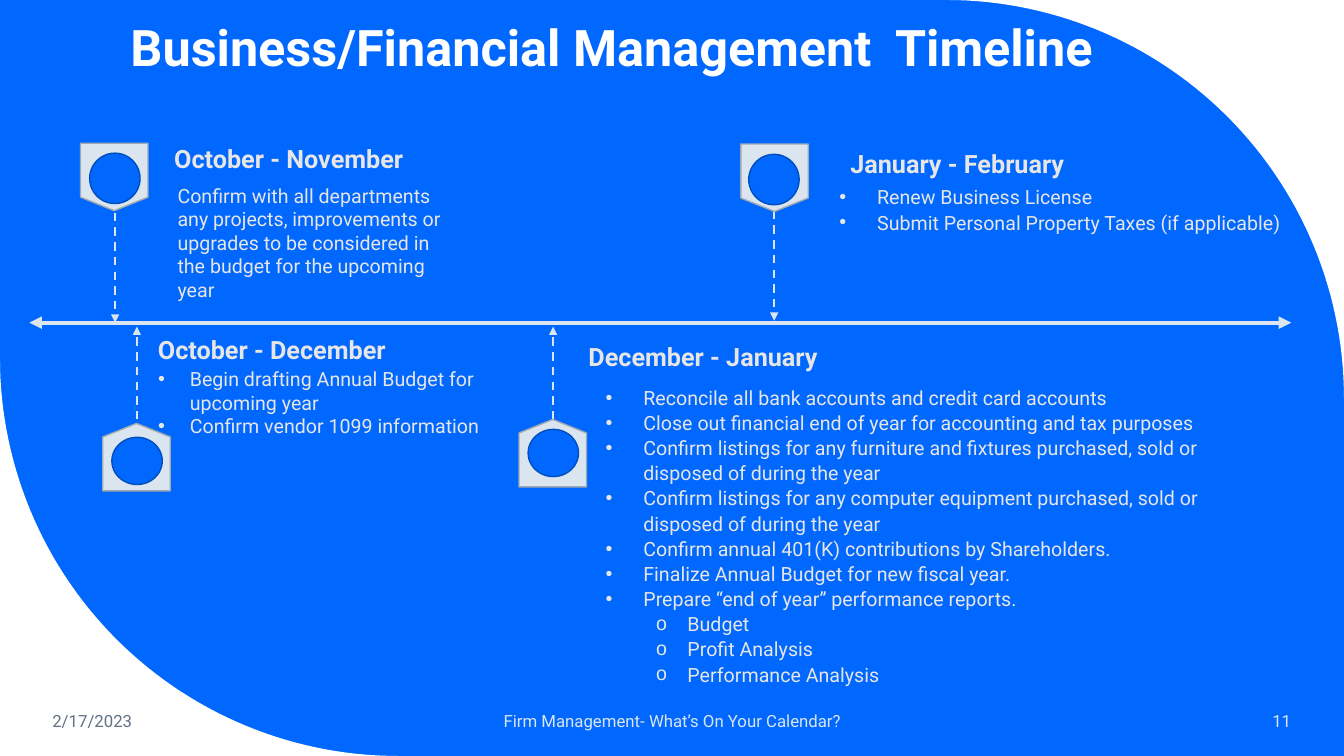
from dataclasses import dataclass
from math import cos, pi, sin

from lxml import etree
from pptx import Presentation
from pptx import util as u
from pptx.dml import color
from pptx.enum import dml, shapes, text
from pptx.oxml import ns

HUES = {
    "blue": "0068FF", "navy": "004DBD", "white": "FFFFFF", "pale": "DAE5EF",
    "edge": "A1A9B1", "slate": "637183", "light": "E7E6E6",
}
WIDE, HIGH, CURVE = 33.87, 19.05, 10.03
AXIS = 8.13
LEFT, MID, RIGHT = text.PP_ALIGN.LEFT, text.PP_ALIGN.CENTER, text.PP_ALIGN.RIGHT


@dataclass
class Box:
    x: float
    y: float
    w: float
    h: float


@dataclass
class Item:
    text: str
    level: int = 0


@dataclass
class Stage:
    name: str
    head: Box
    body: Box
    items: list[Item]
    badge: Box
    dot: Box
    stem: tuple[float, float, float]
    below: bool = False
    indent: float = 0
    lead: float = 1.0
    after: int = 0


@dataclass
class Note:
    text: str
    box: Box
    hue: str
    align: text.PP_ALIGN


STAGES = [
    Stage("October - November", Box(4.14, 3.48, 8.99, 1.02),
          Box(4.22, 4.5, 7.39, 3.25),
          [Item("Confirm with all departments any projects, improvements or "
                "upgrades to be considered in the budget for the upcoming year")],
          Box(2.03, 3.61, 1.7, 1.7), Box(2.26, 3.86, 1.27, 1.27),
          (2.9, 5.36, AXIS)),
    Stage("December - January", Box(14.58, 8.48, 11.79, 1.02),
          Box(15.01, 9.55, 16.05, 7.9),
          [Item("Reconcile all bank accounts and credit card accounts"),
           Item("Close out financial end of year for accounting and tax purposes"),
           Item("Confirm listings for any furniture and fixtures purchased, "
                "sold or disposed of during the year"),
           Item("Confirm listings for any computer equipment purchased, "
                "sold or disposed of during the year"),
           Item("Confirm annual 401(K) contributions by Shareholders."),
           Item("Finalize Annual Budget for new fiscal year."),
           Item("Prepare “end of year” performance reports."),
           Item("Budget", 1), Item("Profit Analysis", 1),
           Item("Performance Analysis", 1)],
          Box(13.08, 10.57, 1.7, 1.7), Box(13.31, 10.82, 1.27, 1.19),
          (13.94, 10.57, 8.23), True, 0.95, 1.07, 8),
    Stage("January - February", Box(21.18, 3.61, 8, 1.02),
          Box(20.9, 4.5, 11.63, 1.5),
          [Item("Renew Business License"),
           Item("Submit Personal Property Taxes (if applicable)")],
          Box(18.67, 3.63, 1.7, 1.7), Box(18.87, 3.89, 1.27, 1.27),
          (19.51, 5.31, 8.08), False, 0.95, 1.07, 8),
    Stage("October - December", Box(3.73, 8.31, 6.4, 1.02),
          Box(3.73, 9.12, 9.14, 2.69),
          [Item("Begin drafting Annual Budget for upcoming year"),
           Item("Confirm vendor 1099 information")],
          Box(2.59, 10.67, 1.7, 1.7), Box(2.82, 11.02, 1.27, 1.19),
          (3.45, 10.57, 8.23), True, 0.8),
]

NOTES = [
    Note("2/17/2023", Box(1.07, 17.65, 4.72, 1.02), "slate", LEFT),
    Note("Firm Management- What’s On Your Calendar?",
         Box(11.23, 17.65, 11.43, 1.02), "pale", MID),
    Note("11", Box(28.19, 17.65, 4.6, 1.02), "pale", RIGHT),
]


def rgb(hue: str) -> color.RGBColor:
    return color.RGBColor.from_string(HUES[hue])


def place(shape, box: Box) -> None:
    shape.left, shape.top = u.Cm(box.x), u.Cm(box.y)
    shape.width, shape.height = u.Cm(box.w), u.Cm(box.h)


def write(shape, items: list[Item], *, size: int, hue: str = "light",
          bold: bool = False, align=LEFT, anchor=text.MSO_ANCHOR.TOP,
          indent: float = 0, lead: float = 1.0, after: int = 0) -> None:
    frame = shape.text_frame
    frame.word_wrap = True
    frame.auto_size = text.MSO_AUTO_SIZE.NONE
    frame.vertical_anchor = anchor
    for i, item in enumerate(items):
        para = frame.add_paragraph() if i else frame.paragraphs[0]
        para.level, para.alignment = item.level, align
        para.line_spacing, para.space_before = lead, u.Pt(0)
        para.space_after = u.Pt(after if i == len(items) - 1 else 0)
        run = para.add_run()
        run.text = item.text
        run.font.name, run.font.size, run.font.bold = "Roboto", u.Pt(size), bold
        run.font.color.rgb = rgb(hue)
        bullet(para, item.level, indent)


def bullet(para, level: int, indent: float) -> None:
    props = para._p.get_or_add_pPr()
    left, hang = (2.06, 0.79) if level else (indent, indent)
    props.set("marL", str(u.Cm(left)))
    props.set("indent", str(-u.Cm(hang)))
    mark = etree.SubElement(props, ns.qn("a:buChar" if indent else "a:buNone"))
    if indent:
        mark.set("char", "o" if level else "•")


def label(slide, words: str, box: Box, **style) -> None:
    area = slide.shapes.add_textbox(0, 0, 0, 0)
    place(area, box)
    write(area, [Item(words)], **style)


def solid(slide, kind, box: Box, fill: str, edge: str, turn: int = 0) -> None:
    shape = slide.shapes.add_shape(kind, 0, 0, 0, 0)
    place(shape, box)
    shape.rotation = turn
    shape.shadow.inherit = False
    shape.fill.solid()
    shape.fill.fore_color.rgb = rgb(fill)
    shape.line.color.rgb = rgb(edge)
    shape.line.width = u.Pt(1)


def arrow(slide, x1: float, y1: float, x2: float, y2: float, width: float,
          ends: list[str], dash: bool = False) -> None:
    link = slide.shapes.add_connector(
        shapes.MSO_CONNECTOR.STRAIGHT, u.Cm(x1), u.Cm(y1), u.Cm(x2), u.Cm(y2))
    link.line.color.rgb = rgb("pale")
    link.line.width = u.Pt(width)
    if dash:
        link.line.dash_style = dml.MSO_LINE.DASH
    for end in ends:
        etree.SubElement(link.line._ln, ns.qn(f"a:{end}")).set("type", "triangle")
    etree.SubElement(link._element.spPr, ns.qn("a:effectLst"))


def corner(slide, x: float, y: float, start: float) -> None:
    cx = x - CURVE if x else CURVE
    cy = y - CURVE if y else CURVE
    steps = 60
    turns = [start + pi / 2 * i / steps for i in range(steps + 1)]
    points = [(u.Cm(cx + CURVE * cos(t)), u.Cm(cy + CURVE * sin(t))) for t in turns]
    pen = slide.shapes.build_freeform(u.Cm(x), u.Cm(y))
    pen.add_line_segments(points, close=True)
    shape = pen.convert_to_shape()
    shape.shadow.inherit = False
    shape.fill.solid()
    shape.fill.fore_color.rgb = rgb("white")
    shape.line.fill.background()


def draw(slide, stage: Stage, body) -> None:
    kinds = shapes.MSO_SHAPE
    x, start, end = stage.stem
    arrow(slide, x, start, x, end, 1.5, ["tailEnd"], dash=True)
    solid(slide, kinds.FLOWCHART_OFFPAGE_CONNECTOR, stage.badge, "pale", "edge",
          180 if stage.below else 0)
    solid(slide, kinds.FLOWCHART_CONNECTOR, stage.dot, "blue", "navy")
    label(slide, stage.name, stage.head, size=18, bold=True)
    place(body, stage.body)
    write(body, stage.items, size=14, indent=stage.indent, lead=stage.lead,
          after=stage.after)


def main() -> None:
    deck = Presentation()
    deck.slide_width, deck.slide_height = u.Cm(WIDE), u.Cm(HIGH)
    slide = deck.slides.add_slide(deck.slide_layouts.get_by_name("Comparison"))
    slide.background.fill.solid()
    slide.background.fill.fore_color.rgb = rgb("blue")
    title, *bodies = slide.placeholders
    corner(slide, WIDE, 0, -pi / 2)
    corner(slide, 0, HIGH, pi / 2)
    place(title, Box(0.74, 0.38, 29.67, 1.7))
    write(title, [Item("Business/Financial Management  Timeline ")], size=36,
          hue="white", bold=True, align=MID, anchor=text.MSO_ANCHOR.BOTTOM,
          lead=0.9)
    for note in NOTES:
        label(slide, note.text, note.box, size=12, hue=note.hue,
              align=note.align, anchor=text.MSO_ANCHOR.MIDDLE)
    arrow(slide, 0.74, AXIS, 32.54, AXIS, 3, ["headEnd", "tailEnd"])
    for stage, body in zip(STAGES, bodies):
        draw(slide, stage, body)
    deck.save("out.pptx")


if __name__ == "__main__":
    main()
